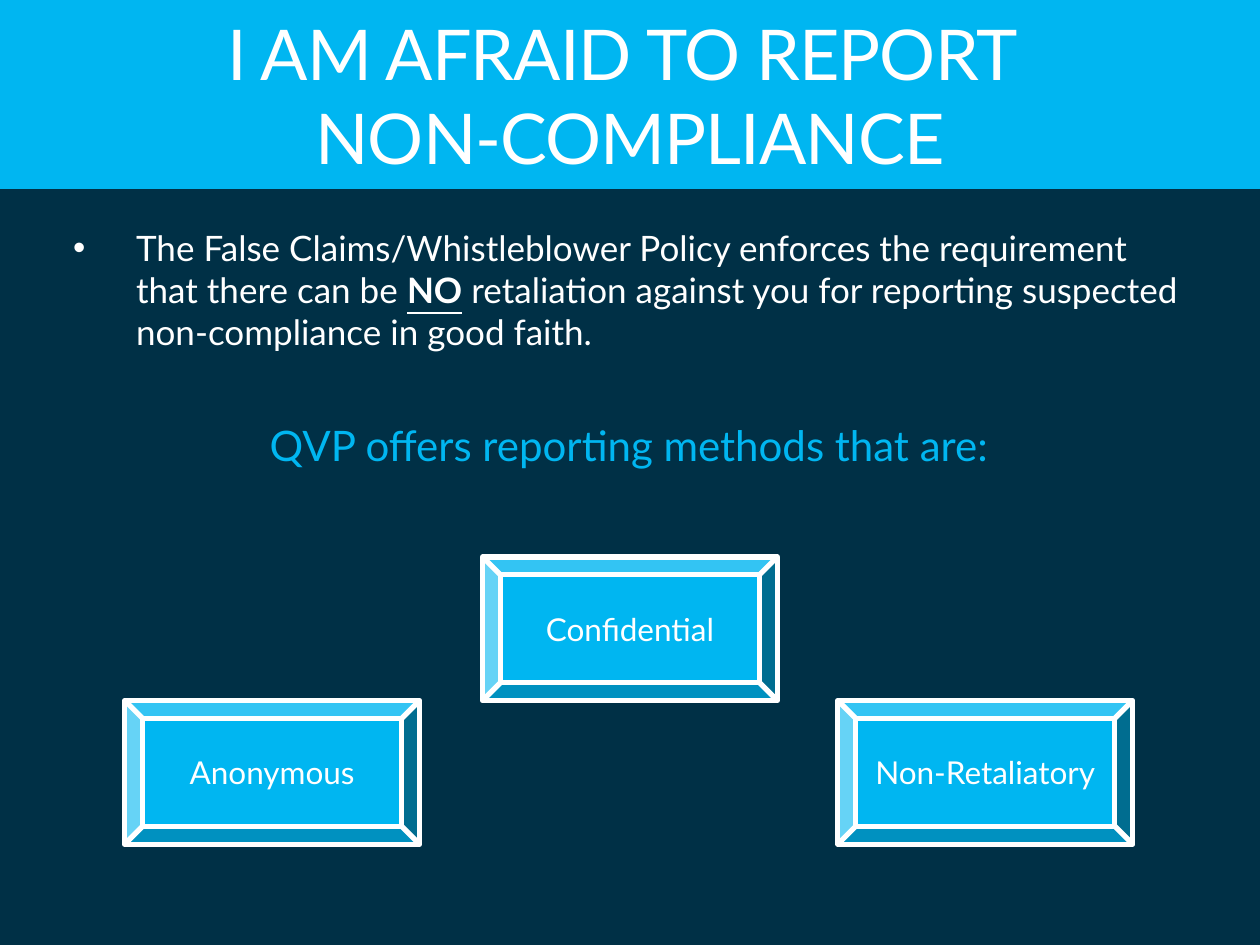
from pptx import Presentation
from pptx.dml.color import RGBColor
from pptx.enum.shapes import MSO_SHAPE
from pptx.enum.text import MSO_ANCHOR, MSO_AUTO_SIZE, PP_ALIGN
from pptx.oxml.ns import qn
from pptx.util import Pt
from lxml import etree
from dataclasses import dataclass

BEVEL = MSO_SHAPE.BEVEL
MIDDLE = MSO_ANCHOR.MIDDLE
FIXED = MSO_AUTO_SIZE.NONE
LEFT = PP_ALIGN.LEFT
CENTER = PP_ALIGN.CENTER
PX = 9144


@dataclass
class Theme:
    navy: RGBColor = RGBColor(0x00, 0x30, 0x46)
    sky: RGBColor = RGBColor(0x00, 0xB6, 0xF1)
    white: RGBColor = RGBColor(0xFF, 0xFF, 0xFF)
    font: str = "Lato"
    title: int = 40
    lead: int = 24
    body: int = 20
    label: int = 18


theme = Theme()


def place(shape, left, top, width, height):
    shape.left, shape.top = left * PX, top * PX
    shape.width, shape.height = width * PX, height * PX


def add_run(para, text, size, color, bold=False):
    run = para.add_run()
    run.text = text
    run.font.name = theme.font
    run.font.size = Pt(size)
    run.font.color.rgb = color
    run.font.bold = bold
    run.font.underline = bold
    return run


deck = Presentation()
deck.slide_width, deck.slide_height = 1000 * PX, 750 * PX
slide = deck.slides.add_slide(deck.slide_layouts[1])
slide.background.fill.solid()
slide.background.fill.fore_color.rgb = theme.navy

title = slide.shapes.title
place(title, 0, 0, 1000, 150)
title.fill.solid()
title.fill.fore_color.rgb = theme.sky
frame = title.text_frame
frame.auto_size = FIXED
frame.vertical_anchor = MIDDLE
para = frame.paragraphs[0]
para.alignment = CENTER
for row, text in enumerate(["I AM AFRAID TO REPORT ", "NON-COMPLIANCE"]):
    if row:
        para.add_line_break()
    run = add_run(para, text, theme.title, theme.white)
    run.font._element.set("spc", "-50")

body = slide.placeholders[1]
place(body, 48, 175, 902, 544)
frame = body.text_frame
frame.auto_size = FIXED
policy = frame.paragraphs[0]
offer = frame.add_paragraph()
for para, align, gap, indent, bullet in [
    (policy, LEFT, 0, 50, "•"),
    (offer, CENTER, 38, 0, None),
]:
    para.alignment = align
    para.space_before = Pt(gap)
    props = para._p.get_or_add_pPr()
    props.set("marL", str(indent * PX))
    props.set("indent", str(-indent * PX))
    if bullet:
        etree.SubElement(props, qn("a:buChar")).set("char", bullet)
    else:
        etree.SubElement(props, qn("a:buNone"))

for text, bold in [
    ("The False Claims/Whistleblower Policy enforces the requirement that there can be ", False),
    ("NO", True),
    (" retaliation against you for reporting suspected non-compliance in good faith.", False),
]:
    add_run(policy, text, theme.body, theme.white, bold)
add_run(offer, "QVP offers reporting methods that are:", theme.lead, theme.sky)

for label, left, top in [
    ("Anonymous", 99, 556),
    ("Confidential", 383, 442),
    ("Non-Retaliatory", 665, 556),
]:
    box = slide.shapes.add_shape(BEVEL, left * PX, top * PX, 234 * PX, 114 * PX)
    box.shadow.inherit = False
    box.fill.solid()
    box.fill.fore_color.rgb = theme.sky
    box.line.color.rgb = theme.white
    box.line.width = Pt(3)
    frame = box.text_frame
    frame.word_wrap = True
    frame.vertical_anchor = MIDDLE
    para = frame.paragraphs[0]
    para.alignment = CENTER
    add_run(para, label, theme.label, theme.white)

deck.save("out.pptx")
